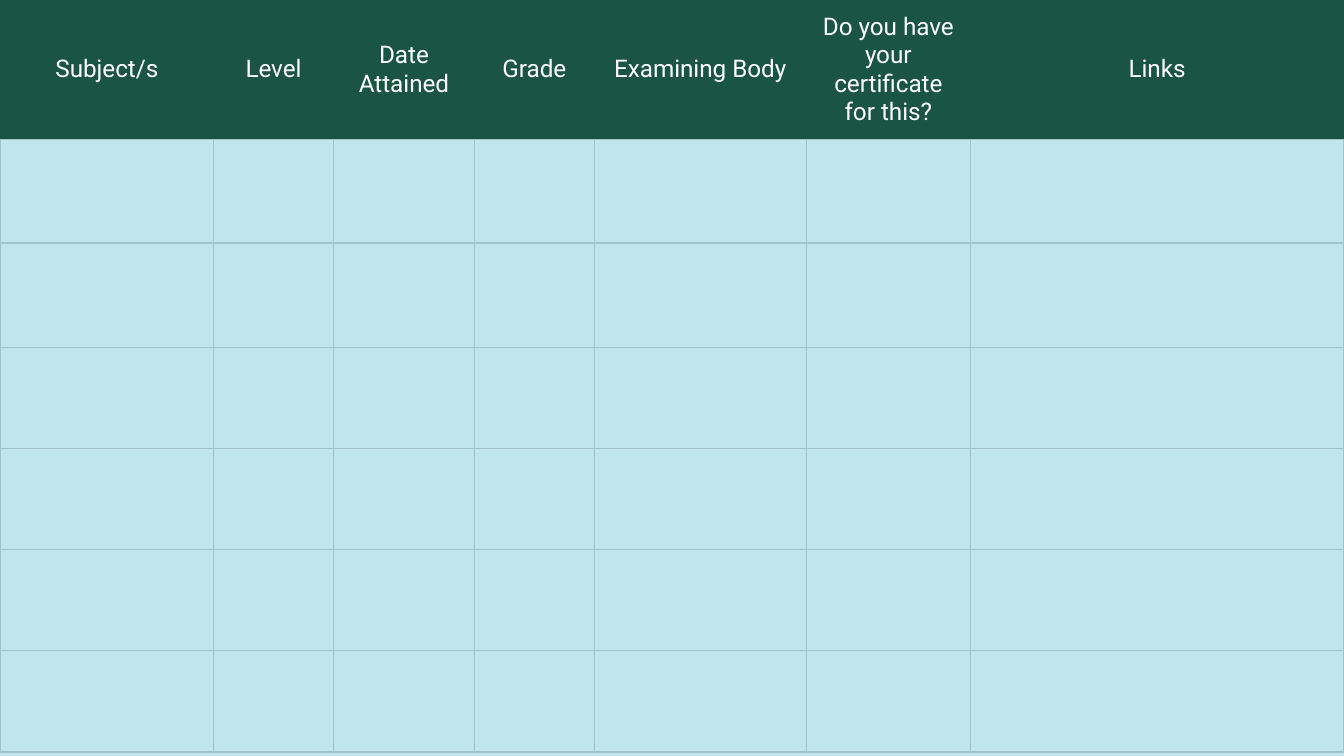
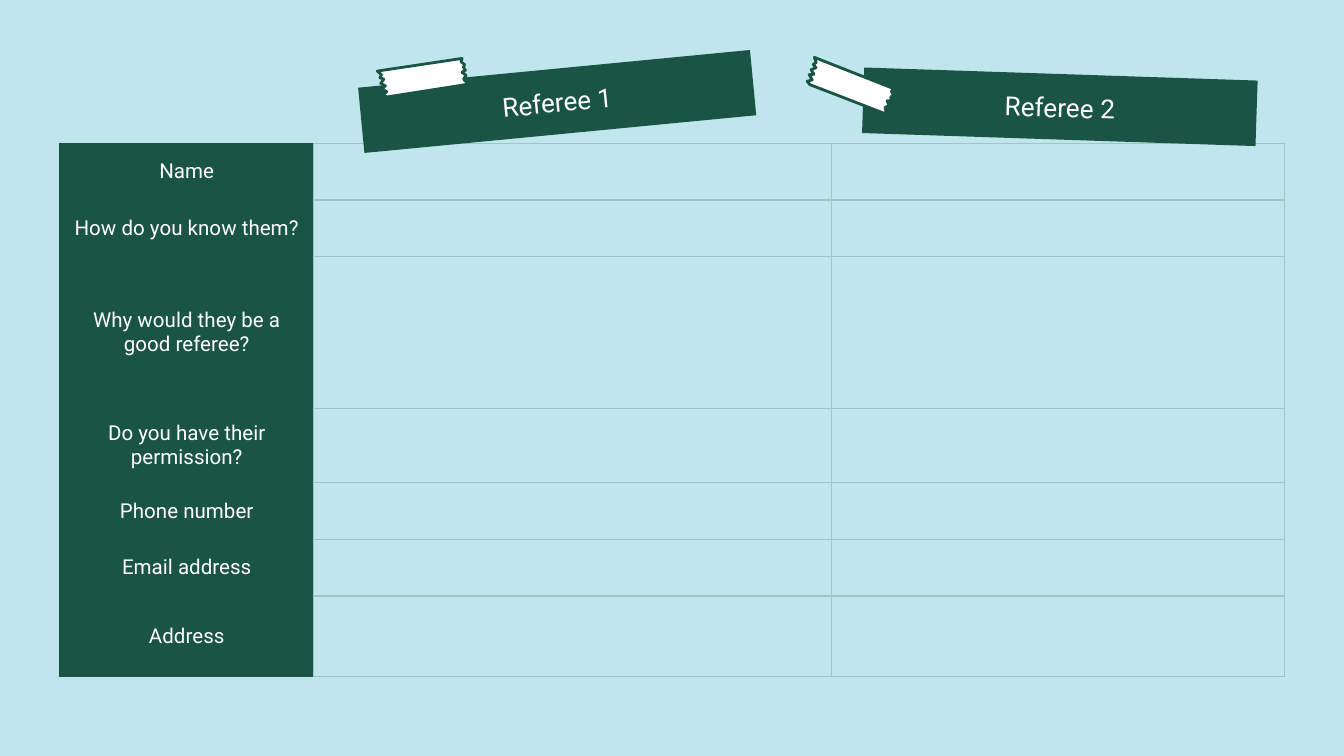
from dataclasses import dataclass

from lxml.etree import SubElement
from pptx import Presentation
from pptx.dml.color import RGBColor as Rgb
from pptx.enum.shapes import MSO_SHAPE as Preset
from pptx.enum.text import MSO_ANCHOR as Anchor, PP_ALIGN as Align
from pptx.oxml.ns import qn
from pptx.util import Cm, Pt


@dataclass(frozen=True)
class Theme:
    font: str = "Roboto"
    sky: str = "C0E6ED"
    forest: str = "1A5444"
    rule: str = "A2C4C9"
    white: str = "FFFFFF"
    heading_size: float = 13
    question_size: float = 11
    banner_size: float = 14
    rule_width: float = 0.75
    tape_outline: float = 1.5


theme = Theme()
label_format = {
    "margin_left": Cm(0.25),
    "margin_right": Cm(0.25),
    "margin_top": Cm(0.25),
    "margin_bottom": Cm(0.25),
    "vertical_anchor": Anchor.MIDDLE,
}


def write_label(holder, text_frame, text, size):
    for name, value in label_format.items():
        setattr(holder, name, value)
    paragraph = text_frame.paragraphs[0]
    paragraph.alignment = Align.CENTER
    run = paragraph.add_run()
    run.text = text
    font_format = {"name": theme.font, "size": Pt(size), "bold": False}
    for name, value in font_format.items():
        setattr(run.font, name, value)
    run.font.color.rgb = Rgb.from_string(theme.white)


def add_form(slide, left, top, height, columns, rows, labels, size, rule_side):
    frame = slide.shapes.add_table(
        len(rows), len(columns), Cm(left), Cm(top), Cm(sum(columns)), Cm(height)
    )
    form = frame.table
    form.first_row = form.horz_banding = False
    for column, width in zip(form.columns, columns):
        column.width = Cm(width)
    for row, row_height in zip(form.rows, rows):
        row.height = Cm(row_height)
    frame.height = Cm(height)

    for r in range(len(rows)):
        for c in range(len(columns)):
            cell = form.cell(r, c)
            label = labels.get((r, c))
            if label:
                write_label(cell, cell.text_frame, label, size)
                cell.fill.solid()
                cell.fill.fore_color.rgb = Rgb.from_string(theme.forest)
            else:
                cell.fill.background()
            properties = cell._tc.get_or_add_tcPr()
            for position, side in enumerate(("lnL", "lnR", "lnT", "lnB")):
                color = theme.forest if label and side != rule_side else theme.rule
                border = SubElement(properties, qn(f"a:{side}"), w=str(Pt(theme.rule_width)))
                solid = SubElement(border, qn("a:solidFill"))
                SubElement(solid, qn("a:srgbClr"), val=color)
                properties.insert(position, border)


prs = Presentation()
prs.slide_width, prs.slide_height = Cm(25.4), Cm(14.29)
qualifications, referees = [prs.slides.add_slide(prs.slide_layouts[6]) for _ in range(2)]
for slide in (qualifications, referees):
    slide.background.fill.solid()
    slide.background.fill.fore_color.rgb = Rgb.from_string(theme.sky)

headings = [
    "Subject/s",
    "Level",
    "Date Attained",
    "Grade",
    "Examining Body",
    "Do you have your certificate for this?",
    "Links",
]
add_form(
    qualifications, 0, 0, 14.29,
    columns=[4.04, 2.26, 2.67, 2.26, 4.01, 3.1, 7.06],
    rows=[1.07, 1.96, 1.98] + [1.91] * 4,
    labels={(0, c): heading for c, heading in enumerate(headings)},
    size=theme.heading_size,
    rule_side="lnB",
)

questions = [
    "Name",
    "How do you know them?",
    "Why would they be a good referee?",
    "Do you have their permission?",
    "Phone number",
    "Email address",
    "Address",
]
add_form(
    referees, 1.13, 2.71, 10.57,
    columns=[4.8, 9.78, 8.56],
    rows=[1.07, 1.07, 2.87, 1.07, 1.07, 1.07, 1.52],
    labels={(r, 0): question for r, question in enumerate(questions)},
    size=theme.question_size,
    rule_side="lnR",
)

tape_outline = [
    (0, 0), (0.07, 0.08), (0.03, 0.13), (0.1, 0.17), (0.03, 0.24), (0.11, 0.3),
    (0.03, 0.34), (0.12, 0.41), (0.04, 0.47), (0.11, 0.51), (1.6, 0.5),
    (1.65, 0.48), (1.59, 0.39), (1.65, 0.33), (1.58, 0.26), (1.65, 0.23),
    (1.62, 0.17), (1.65, 0.12), (1.59, 0.06), (1.62, 0),
]
tape_points = [(Cm(x), Cm(y)) for x, y in tape_outline]
banners = [
    ("Referee 1", 6.81, 1.3, -5.5, 7.16, 1.22, -8.5),
    ("Referee 2", 16.31, 1.4, 1.9, 15.24, 1.37, 21.5),
]
for name, left, top, tilt, tape_left, tape_top, tape_tilt in banners:
    banner = referees.shapes.add_group_shape()

    strip = banner.shapes.add_shape(Preset.RECTANGLE, Cm(left), Cm(top), Cm(7.44), Cm(1.24))
    strip.rotation = tilt
    strip.line.fill.background()

    caption = banner.shapes.add_textbox(Cm(left + 0.48), Cm(top + 0.18), Cm(6.48), Cm(0.89))
    caption.rotation = tilt - 0.2
    caption.text_frame.word_wrap = True
    write_label(caption.text_frame, caption.text_frame, name, theme.banner_size)

    builder = banner.shapes.build_freeform(*tape_points[0])
    builder.add_line_segments(tape_points[1:], close=True)
    tape = builder.convert_to_shape(Cm(tape_left), Cm(tape_top))
    tape.rotation = tape_tilt
    tape.line.color.rgb = Rgb.from_string(theme.forest)
    tape.line.width = Pt(theme.tape_outline)

    for part, color in ((strip, theme.forest), (tape, theme.white)):
        part.shadow.inherit = False
        part.fill.solid()
        part.fill.fore_color.rgb = Rgb.from_string(color)

prs.save("out.pptx")
